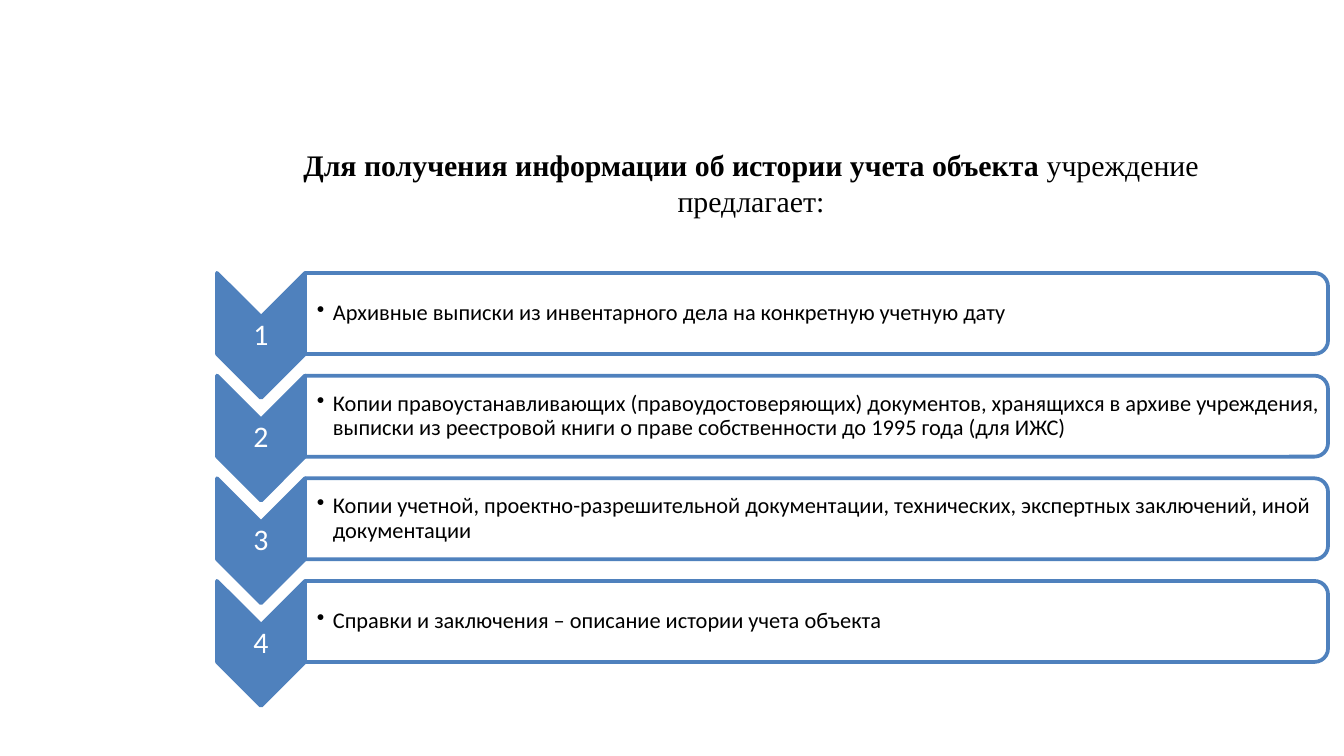
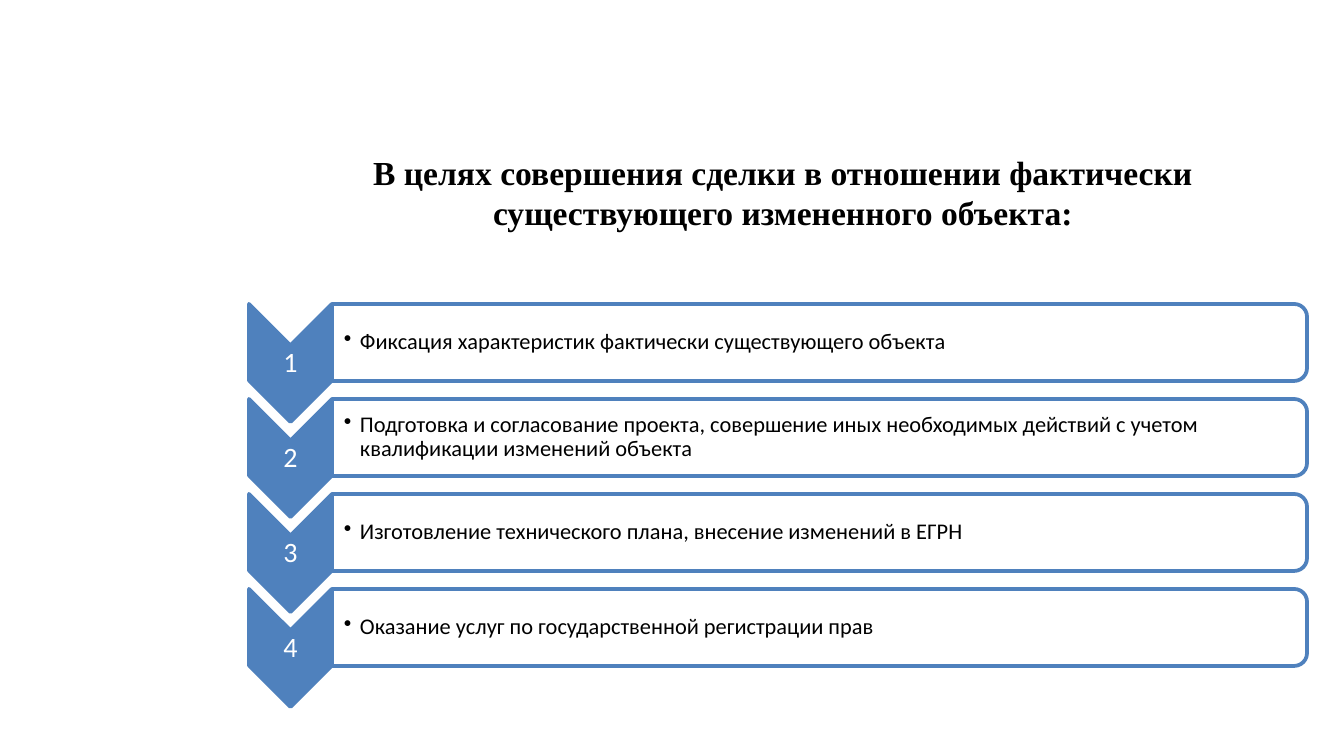
from dataclasses import dataclass
from typing import NamedTuple

from lxml.etree import SubElement
from pptx import Presentation
from pptx.dml.color import RGBColor
from pptx.enum.shapes import MSO_SHAPE as Preset
from pptx.enum.text import MSO_ANCHOR as Anchor, MSO_AUTO_SIZE as AutoSize, PP_ALIGN as Align
from pptx.oxml.ns import qn
from pptx.util import Emu, Pt

PX_PER_INCH = 134.4


def px(length):
    return Emu(round(length * 914400 / PX_PER_INCH))


class Box(NamedTuple):
    left: float
    top: float
    width: float
    height: float

    def emu(self):
        return [px(value) for value in self]

    def quarter_turned(self):
        center_x = self.left + self.width / 2
        center_y = self.top + self.height / 2
        return Box(center_x - self.height / 2, center_y - self.width / 2, self.height, self.width)


@dataclass(frozen=True)
class Theme:
    accent: RGBColor = RGBColor(0x4F, 0x81, 0xBD)
    paper: RGBColor = RGBColor(0xFF, 0xFF, 0xFF)
    ink: RGBColor = RGBColor(0, 0, 0)
    title_font: str = "Times New Roman"
    body_font: str = "Calibri"
    body_size: int = 12
    outline: int = 2
    bar_alpha: int = 90


THEME = Theme()


def write_text(shape, runs, *, size, font=THEME.body_font, color=THEME.ink, align=Align.LEFT,
               anchor=Anchor.MIDDLE, insets=(1, 1, 1, 1), spacing=None, bullet_indent=None):
    frame = shape.text_frame
    frame.word_wrap = True
    frame.auto_size = AutoSize.NONE
    frame.vertical_anchor = anchor
    frame.margin_left, frame.margin_top, frame.margin_right, frame.margin_bottom = map(px, insets)
    paragraph = frame.paragraphs[0]
    paragraph.alignment = align
    if spacing:
        paragraph.line_spacing = spacing
    if bullet_indent:
        properties = paragraph._p.get_or_add_pPr()
        properties.set("marL", str(px(bullet_indent)))
        properties.set("indent", str(-px(bullet_indent)))
        SubElement(properties, qn("a:buChar")).set("char", "•")
    for text, bold in runs:
        run = paragraph.add_run()
        run.text = text
        run.font.name = font
        run.font.size = Pt(size)
        run.font.bold = bold
        run.font.color.rgb = color


def add_turned_shape(shapes, preset, box, fill):
    shape = shapes.add_shape(preset, *box.quarter_turned().emu())
    shape.rotation = 90
    shape.shadow.inherit = False
    shape.fill.solid()
    shape.fill.fore_color.rgb = fill
    shape.line.color.rgb = THEME.accent
    shape.line.width = Pt(THEME.outline)
    return shape


def add_step(shapes, box, number, text, number_size):
    chevron_width = round(box.height * 0.7)
    bar_height = round(box.height * 0.65)
    chevron = Box(box.left, box.top, chevron_width, box.height)
    bar = Box(box.left + chevron_width, box.top, box.width - chevron_width, bar_height)
    number_height = box.height * 0.3
    number_box = Box(box.left, box.top + (box.height - number_height) / 2,
                     chevron_width, number_height)
    text_box = Box(bar.left, bar.top + 4, bar.width - 4, bar.height - 8)

    add_turned_shape(shapes, Preset.CHEVRON, chevron, THEME.accent)
    write_text(shapes.add_textbox(*number_box.emu()), [(str(number), False)], size=number_size,
               color=THEME.paper, align=Align.CENTER, spacing=0.9)
    bar_shape = add_turned_shape(shapes, Preset.ROUND_2_SAME_RECTANGLE, bar, THEME.paper)
    fill_color = bar_shape._element.spPr.find(qn("a:solidFill"))[0]
    SubElement(fill_color, qn("a:alpha")).set("val", str(THEME.bar_alpha * 1000))
    write_text(shapes.add_textbox(*text_box.emu()), [(text, False)], size=THEME.body_size,
               insets=(12, 1, 1, 1), spacing=0.9, bullet_indent=16)


def add_step_list(slide, box, steps, step_height, number_size):
    shapes = slide.shapes.add_group_shape().shapes
    pitch = (box.height - step_height) / (len(steps) - 1)
    for index, text in enumerate(steps):
        step_box = Box(box.left, box.top + index * pitch, box.width, step_height)
        add_step(shapes, step_box, index + 1, text, number_size)


def add_title(slide, box, runs, **text_format):
    title = slide.shapes.title
    title.left, title.top, title.width, title.height = box.emu()
    write_text(title, runs, font=THEME.title_font, align=Align.CENTER, **text_format)


def add_steps_slide(presentation, title, steps):
    slide = presentation.slides.add_slide(presentation.slide_layouts[5])
    add_title(slide, **title)
    add_step_list(slide, **steps)


def main():
    presentation = Presentation()
    presentation.slide_width = px(1344)
    presentation.slide_height = px(756)
    add_steps_slide(
        presentation,
        title=dict(
            box=Box(259, 156, 984, 106),
            runs=[("Для получения информации об истории учета объекта ", True),
                  ("учреждение предлагает:", False)],
            size=16, insets=(13, 0, 13, 52)),
        steps=dict(
            box=Box(217, 273, 1111, 433), step_height=125, number_size=16,
            steps=[
                "Архивные выписки из инвентарного дела на конкретную учетную дату",
                "Копии правоустанавливающих (правоудостоверяющих) документов, хранящихся "
                "в архиве учреждения, выписки из реестровой книги о праве собственности "
                "до 1995 года (для ИЖС)",
                "Копии учетной, проектно-разрешительной документации, технических, "
                "экспертных заключений, иной документации",
                "Справки и заключения – описание истории учета объекта",
            ]))
    add_steps_slide(
        presentation,
        title=dict(
            box=Box(259, 145, 1048, 136),
            runs=[("В целях совершения сделки в отношении фактически "
                   "существующего измененного объекта:", True)],
            size=18, anchor=Anchor.TOP, insets=(13, 7, 13, 7)),
        steps=dict(
            box=Box(249, 304, 1058, 403), step_height=118, number_size=15,
            steps=[
                "Фиксация характеристик фактически существующего объекта",
                "Подготовка и согласование проекта, совершение иных необходимых действий "
                "с учетом квалификации изменений объекта",
                "Изготовление технического плана, внесение изменений в ЕГРН",
                "Оказание услуг по государственной регистрации прав",
            ]))
    presentation.save("out.pptx")


if __name__ == "__main__":
    main()
